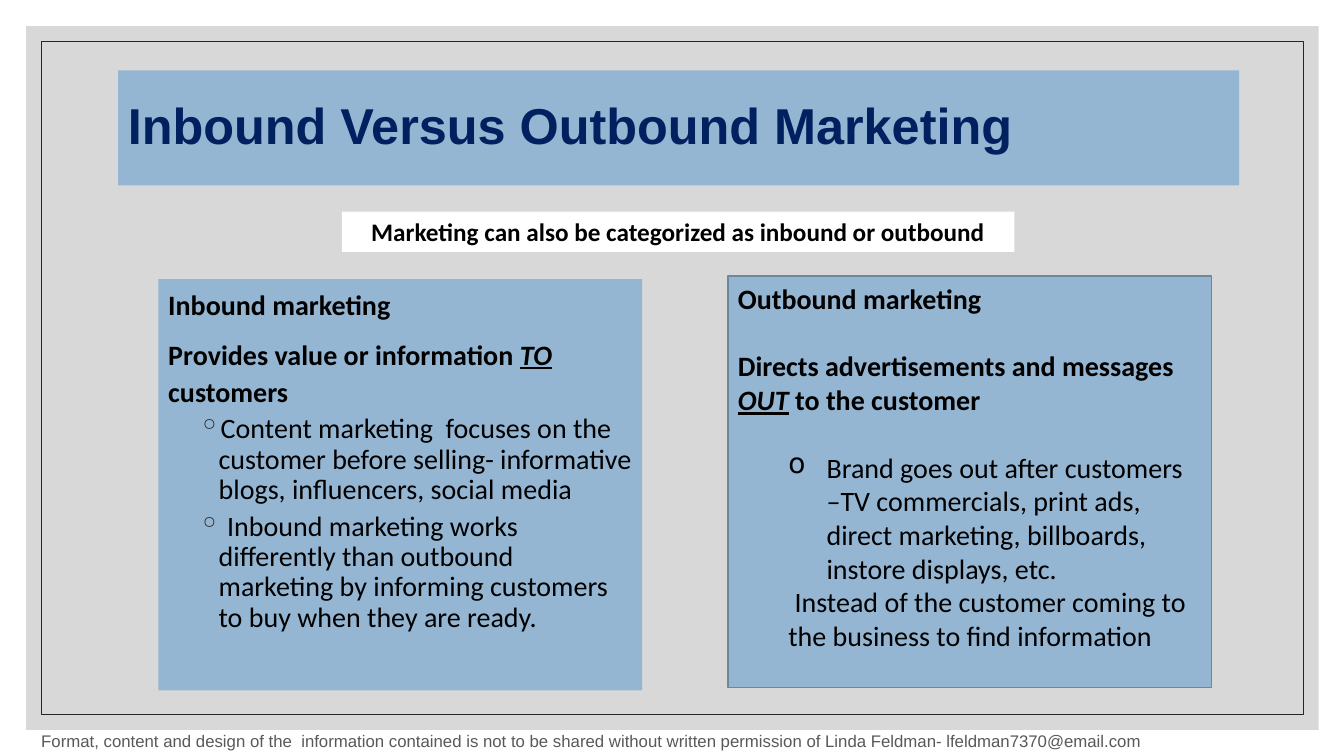
"""Build the slide that compares inbound and outbound marketing."""
import lxml.etree
import pptx
import pptx.dml.color
import pptx.enum.shapes
import pptx.enum.text
import pptx.oxml.ns
import pptx.util

RGBColor = pptx.dml.color.RGBColor
BLACK = RGBColor(0x00, 0x00, 0x00)
WHITE = RGBColor(0xFF, 0xFF, 0xFF)
NAVY = RGBColor(0x00, 0x20, 0x60)
PANEL_BLUE = RGBColor(0x94, 0xB6, 0xD2)
PANEL_EDGE = RGBColor(0x6D, 0x87, 0x9B)
FRAME_GREY = RGBColor(0xBF, 0xBF, 0xBF)
CHARCOAL = RGBColor(0x26, 0x26, 0x26)
FOOTER_GREY = RGBColor(0x59, 0x59, 0x59)

TOP = pptx.enum.text.MSO_ANCHOR.TOP
MIDDLE = pptx.enum.text.MSO_ANCHOR.MIDDLE
LEFT = pptx.enum.text.PP_ALIGN.LEFT
CENTER = pptx.enum.text.PP_ALIGN.CENTER
BLANK_LINE = 24.4


def add_xml(parent, tag, **attributes):
    return lxml.etree.SubElement(parent, pptx.oxml.ns.qn(tag), **attributes)


def write(frame, *pieces, size=20, font="Calibri", color=BLACK, bold=False,
          align=LEFT, spacing=1.0, before=0, margin=0, hang=0,
          bullet=None, bullet_color=BLACK):
    """Add a paragraph; a piece given as a one-item tuple is emphasised."""
    first = frame.paragraphs[0]
    paragraph = frame.add_paragraph() if first.runs else first
    paragraph.alignment = align
    paragraph.line_spacing = spacing
    paragraph.space_before = pptx.util.Pt(before)
    properties = paragraph._p.get_or_add_pPr()
    properties.set("marL", str(pptx.util.Inches(margin)))
    properties.set("indent", str(-pptx.util.Inches(hang)))
    if bullet:
        paragraph.level = 1
        add_xml(add_xml(properties, "a:buClr"), "a:srgbClr", val=str(bullet_color))
        add_xml(properties, "a:buChar", char=bullet)
    for piece in pieces:
        emphasised = isinstance(piece, tuple)
        run = paragraph.add_run()
        run.text = piece[0] if emphasised else piece
        run.font.size = pptx.util.Pt(size)
        run.font.name = font
        run.font.color.rgb = color
        run.font.bold = bold
        run.font.italic = emphasised
        run.font.underline = emphasised


class MarketingSlide:
    """Hold the slide and place elements by percentages of its size."""

    def __init__(self, deck):
        self.width, self.height = deck.slide_width, deck.slide_height
        self.slide = deck.slides.add_slide(deck.slide_layouts[6])

    def area(self, left, top, width, height):
        return (round(self.width * left / 100), round(self.height * top / 100),
                round(self.width * width / 100), round(self.height * height / 100))

    def box(self, *shares, fill=None, alpha=None, line=None, weight=1, anchor=TOP):
        box = self.slide.shapes.add_shape(
            pptx.enum.shapes.MSO_SHAPE.RECTANGLE, *self.area(*shares))
        box.shadow.inherit = False
        if fill is None:
            box.fill.background()
        else:
            box.fill.solid()
            box.fill.fore_color.rgb = fill
        if alpha:
            tint = box._element.spPr.find(".//" + pptx.oxml.ns.qn("a:srgbClr"))
            add_xml(tint, "a:alpha", val=str(alpha * 1000))
        if line is None:
            box.line.fill.background()
        else:
            box.line.color.rgb = line
            box.line.width = pptx.util.Pt(weight)
        box.text_frame.word_wrap = True
        box.text_frame.vertical_anchor = anchor
        return box.text_frame

    def label(self, *shares):
        label = self.slide.shapes.add_textbox(*self.area(*shares))
        label.text_frame.word_wrap = True
        return label.text_frame


def main():
    deck = pptx.Presentation()
    deck.slide_width = pptx.util.Inches(13.33)
    deck.slide_height = pptx.util.Inches(7.5)
    page = MarketingSlide(deck)

    page.box(1.95, 3.47, 96.17, 93.07, fill=FRAME_GREY, alpha=60)
    page.box(3.08, 5.47, 93.92, 89.07, line=CHARCOAL, weight=0.5)

    title = page.box(8.78, 9.33, 83.42, 15.2, fill=PANEL_BLUE, anchor=MIDDLE)
    write(title, "Inbound Versus Outbound Marketing", size=36, font="Arial",
          color=NAVY, bold=True, spacing=0.9)

    inbound = page.box(11.78, 36.93, 36, 54.4, fill=PANEL_BLUE)
    heading = dict(bold=True, spacing=1.1, before=9)
    write(inbound, "Inbound marketing", **heading)
    write(inbound, "Provides value or information ", ("TO",), " customers", **heading)
    for point in (
            "Content marketing  focuses on the customer before selling- "
            "informative blogs, influencers, social media",
            " Inbound marketing works differently than outbound marketing "
            "by informing customers to buy when they are ready."):
        write(inbound, point, spacing=0.9, before=5, margin=0.5, hang=0.2,
              bullet="◦", bullet_color=CHARCOAL)

    outbound = page.box(54.16, 36.53, 36, 54.4, fill=PANEL_BLUE, line=PANEL_EDGE)
    write(outbound, "Outbound marketing", bold=True)
    write(outbound, "Directs advertisements and messages ", ("OUT",),
          " to the customer", bold=True, before=BLANK_LINE)
    write(outbound, "Brand goes out after customers –TV commercials, print ads, "
          "direct marketing, billboards, instore displays, etc.",
          before=BLANK_LINE, margin=0.88, hang=0.38, bullet="o")
    write(outbound, " Instead of the customer coming to the business to find "
          "information", margin=0.5)

    banner = page.box(25.43, 28, 50.04, 5.33, fill=WHITE, anchor=MIDDLE)
    write(banner, "Marketing can also be categorized as inbound or outbound",
          size=18, bold=True, align=CENTER)

    notice = page.label(2.33, 96, 93.02, 4)
    write(notice, "Format, content and design of the  information contained is not "
          "to be shared without written permission of Linda Feldman- "
          "lfeldman7370@email.com", size=12, font="Arial", color=FOOTER_GREY)

    deck.save("out.pptx")


if __name__ == "__main__":
    main()
